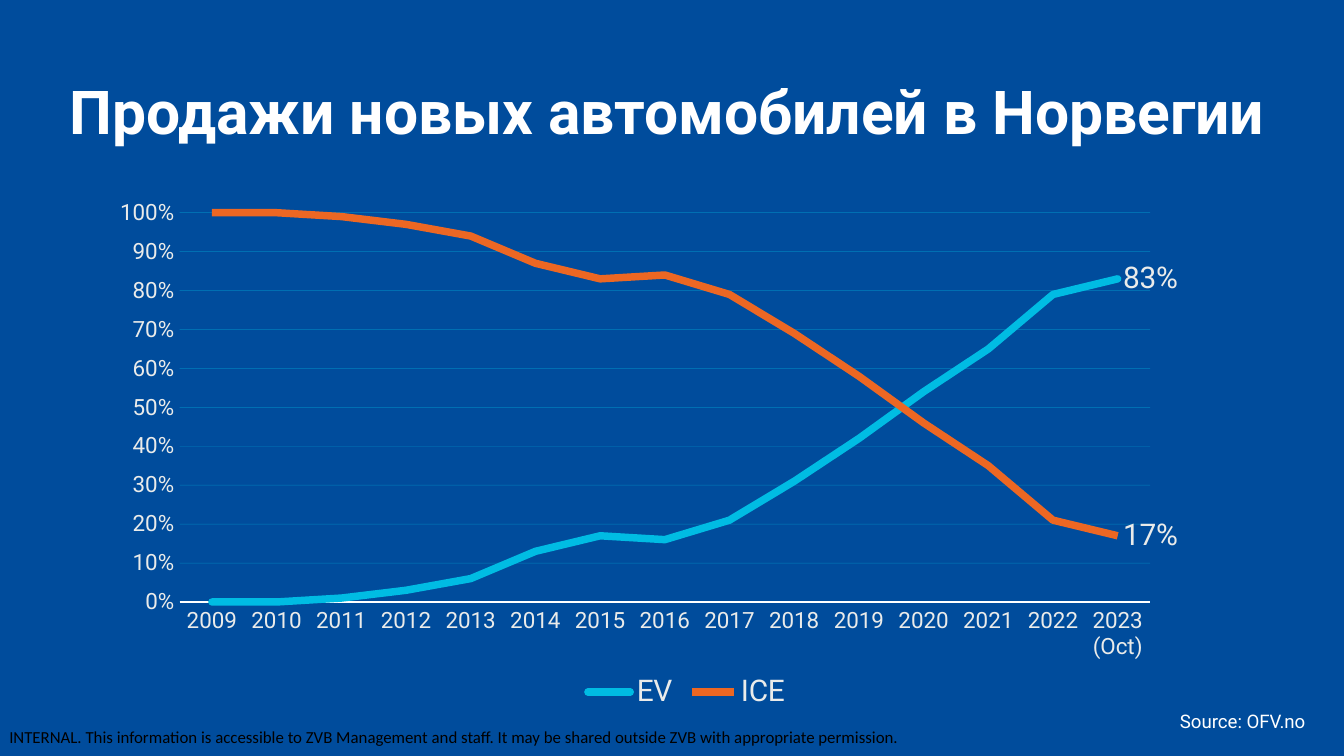
from lxml import etree
from pptx import Presentation
from pptx.chart.data import CategoryChartData
from pptx.dml.color import RGBColor
from pptx.enum.chart import XL_CHART_TYPE, XL_LABEL_POSITION, XL_LEGEND_POSITION, XL_TICK_MARK
from pptx.enum.text import MSO_ANCHOR, MSO_AUTO_SIZE, PP_ALIGN
from pptx.oxml import parse_xml
from pptx.oxml.ns import nsdecls, qn
from pptx.util import Pt

LINE = XL_CHART_TYPE.LINE
RIGHT = XL_LABEL_POSITION.RIGHT
BOTTOM = XL_LEGEND_POSITION.BOTTOM
NO_TICK = XL_TICK_MARK.NONE
LEFT, MIDDLE, NO_FIT = PP_ALIGN.LEFT, MSO_ANCHOR.MIDDLE, MSO_AUTO_SIZE.NONE

TITLE = "Продажи новых автомобилей в Норвегии"
SOURCE = "Source: OFV.no"
NOTICE = ("INTERNAL. This information is accessible to ZVB Management and staff. "
          "It may be shared outside ZVB with appropriate permission.")
YEARS = [str(year) for year in range(2009, 2023)] + ["2023 (Oct)"]
EV_PERCENT = [0, 0, 1, 3, 6, 13, 17, 16, 21, 31, 42, 54, 65, 79, 83]
SERIES = [
    ("EV", EV_PERCENT, "00BCE3", "rnd"),
    ("ICE", [100 - ev for ev in EV_PERCENT], "EC6723", "flat"),
]
PLOT = {"x": 0.078, "y": 0.034, "w": 0.808, "h": 0.749}
BLUE, WHITE, BLACK, PALE, GRID = "004C9C", "FFFFFF", "000000", "EAEBEA", "00BCE3"


def rgb(value):
    """Return the colour for a hex string."""
    return RGBColor.from_string(value)


def set_font(font, size, color, name="Roboto", bold=False):
    """Set the size, colour, typeface and weight of a font."""
    font.size, font.name, font.bold = Pt(size), name, bold
    font.color.rgb = rgb(color)


def add_text(s, text, box, size, color, name, margins, spacing):
    """Add a one-paragraph text box."""
    tf = s.shapes.add_textbox(*map(Pt, box)).text_frame
    tf.word_wrap = True
    tf.margin_left = tf.margin_right = Pt(margins[0])
    tf.margin_top = tf.margin_bottom = Pt(margins[1])
    p = tf.paragraphs[0]
    p.text, p.line_spacing = text, spacing
    set_font(p.font, size, color, name)


def add_title(s):
    """Fill and place the title placeholder."""
    sp = s.shapes.title
    sp.left, sp.top, sp.width, sp.height = map(Pt, (30, 31.5, 660, 55.5))
    tf = sp.text_frame
    tf.text, tf.vertical_anchor, tf.auto_size = TITLE, MIDDLE, NO_FIT
    p = tf.paragraphs[0]
    p.alignment = LEFT
    set_font(p.font, 32.4, WHITE, bold=True)


def style_axes(chart):
    """Format the year and percentage axes."""
    years, shares = chart.category_axis, chart.value_axis
    for axis in (years, shares):
        axis.major_tick_mark = axis.minor_tick_mark = NO_TICK
        set_font(axis.tick_labels.font, 12, PALE)
    years.format.line.color.rgb = rgb(WHITE)
    years.format.line.width = Pt(0.75)
    shares.format.line.fill.background()
    shares.minimum_scale, shares.maximum_scale, shares.major_unit = 0, 1, 0.1
    shares.tick_labels.number_format = "0%"
    shares.tick_labels.number_format_is_linked = False
    line = shares.major_gridlines.format.line
    line.color.rgb, line.width = rgb(GRID), Pt(0.25)
    clr = next(shares.major_gridlines.format.line.fill._xPr.iter(qn("a:srgbClr")))
    etree.SubElement(clr, qn("a:alpha")).set("val", "50000")


def set_plot_area(chart):
    """Fix the inner plot area as fractions of the chart."""
    modes = "".join(f'<c:{k}Mode val="edge"/>' for k in "xy")
    sizes = "".join(f'<c:{k} val="{v}"/>' for k, v in PLOT.items())
    area = chart._chartSpace.chart.plotArea
    for old in area.findall(qn("c:layout")):
        area.remove(old)
    area.insert(0, parse_xml(
        f'<c:layout {nsdecls("c")}><c:manualLayout><c:layoutTarget val="inner"/>'
        f'{modes}{sizes}</c:manualLayout></c:layout>'))


def add_sales_chart(s):
    """Add the line chart of sales shares."""
    data = CategoryChartData(number_format="0%")
    data.categories = YEARS
    for name, percents, _, _ in SERIES:
        data.add_series(name, [v / 100 for v in percents])
    box = map(Pt, (46, 104.5, 643.5, 278.5))
    chart = s.shapes.add_chart(LINE, *box, data).chart
    set_font(chart.font, 16, PALE)
    chart.has_title = False
    chart.has_legend = True
    chart.legend.position, chart.legend.include_in_layout = BOTTOM, False
    set_font(chart.legend.font, 16, PALE)
    style_axes(chart)
    set_plot_area(chart)
    chart.plots[0].vary_by_categories = False
    for series, (_, percents, color, cap) in zip(chart.plots[0].series, SERIES):
        series.smooth = False
        line = series.format.line
        line.color.rgb, line.width = rgb(color), Pt(4)
        next(series._element.iter(qn("a:ln"))).set("cap", cap)
        label = series.points[len(percents) - 1].data_label
        set_font(label.font, 16, PALE)
        label.position = RIGHT


def main():
    """Build the slide and save it."""
    prs = Presentation()
    prs.slide_width, prs.slide_height = Pt(720), Pt(405)
    s = prs.slides.add_slide(prs.slide_layouts[5])
    s.background.fill.solid()
    s.background.fill.fore_color.rgb = rgb(BLUE)
    add_text(s, NOTICE, (5, 389.5, 482.5, 11), 9, BLACK, "Calibri", (0, 0), 1)
    add_title(s)
    add_text(s, SOURCE, (625, 372, 107, 22.5), 10, WHITE, "Roboto", (7.2, 3.6), 1.4)
    add_sales_chart(s)
    prs.save("out.pptx")


if __name__ == "__main__":
    main()
